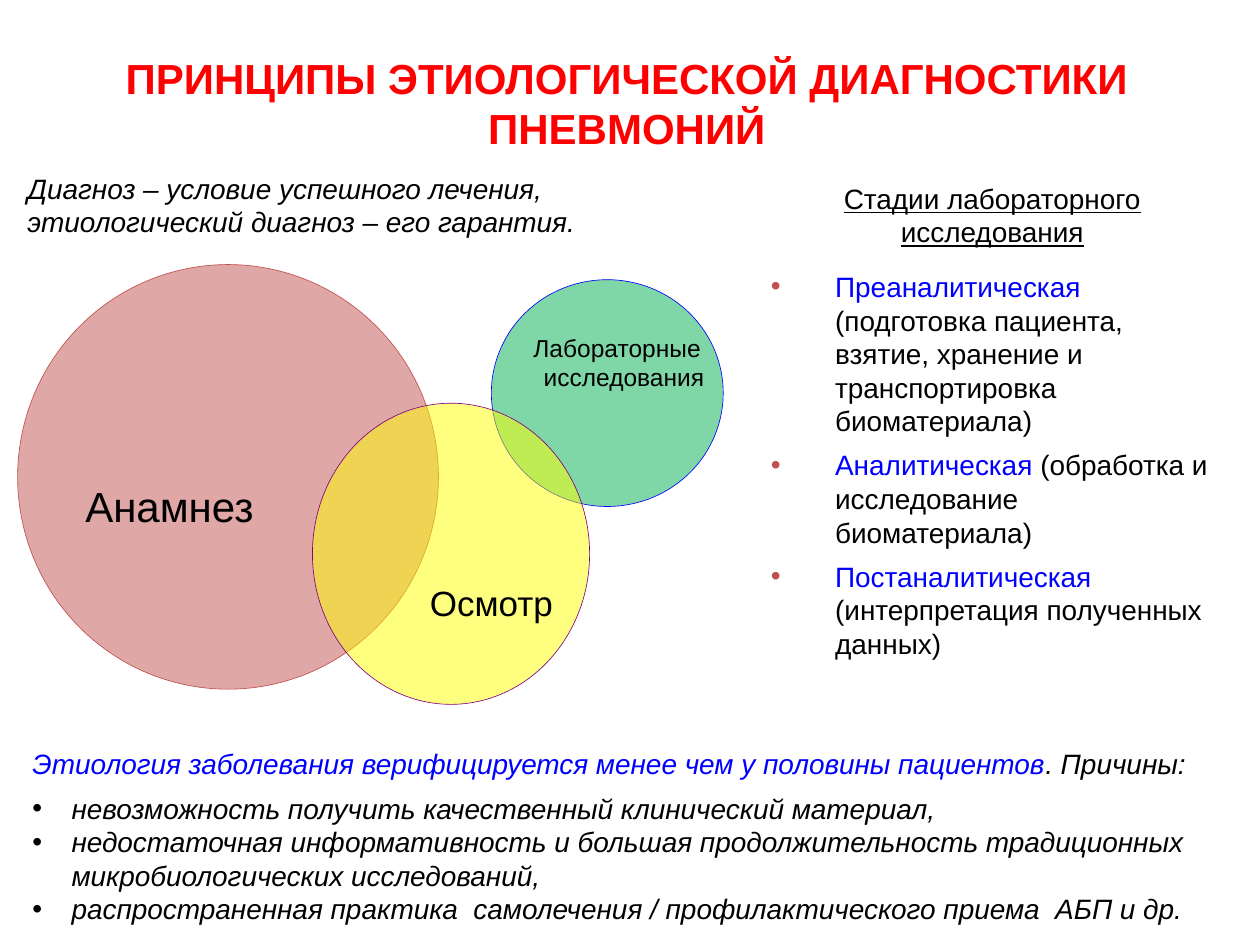
from lxml import etree
from pptx import Presentation
from pptx.dml.color import RGBColor
from pptx.enum.shapes import MSO_SHAPE
from pptx.enum.text import MSO_ANCHOR, PP_ALIGN
from pptx.oxml.ns import qn
from pptx.util import Inches, Pt

OVAL = MSO_SHAPE.OVAL
MIDDLE, TOP = MSO_ANCHOR.MIDDLE, MSO_ANCHOR.TOP
CENTER, LEFT = PP_ALIGN.CENTER, PP_ALIGN.LEFT

BLACK = RGBColor(0, 0, 0)
RED = RGBColor(0xFF, 0, 0)
BLUE = RGBColor(0, 0, 0xFF)
BRICK = RGBColor(0xC0, 0x50, 0x4D)
GREEN = RGBColor(0, 0xB0, 0x50)
YELLOW = RGBColor(0xFF, 0xFF, 0)
PURPLE = RGBColor(0x80, 0, 0x80)

COLS, ROWS = 100, 75


class Board:
    font = "Arial"

    def __init__(self, deck):
        self.wide, self.high = deck.slide_width, deck.slide_height
        self.slide = deck.slides.add_slide(deck.slide_layouts[5])

    def area(self, col, row, cols, rows):
        across, down = self.wide / COLS, self.high / ROWS
        return [int(n) for n in (col * across, row * down, cols * across, rows * down)]

    def title(self, area, text, **look):
        shape = self.slide.shapes.title
        shape.left, shape.top, shape.width, shape.height = self.area(*area)
        shape.text_frame.vertical_anchor = MIDDLE
        self.fill_para(shape.text_frame.paragraphs[0], [(text, {})], CENTER, look)

    def circle(self, area, fill, edge):
        shape = self.slide.shapes.add_shape(OVAL, *self.area(*area))
        shape.shadow.inherit = False
        shape.fill.solid()
        shape.fill.fore_color.rgb = fill
        tint = shape._element.spPr.find(qn("a:solidFill")).find(qn("a:srgbClr"))
        etree.SubElement(tint, qn("a:alpha"), val="50000")
        shape.line.color.rgb = edge
        shape.line.width = Pt(0.37)

    def text(self, area, items, wrap=True, **look):
        frame = self.slide.shapes.add_textbox(*self.area(*area)).text_frame
        frame.word_wrap = wrap
        frame.vertical_anchor = TOP if wrap else MIDDLE
        if not wrap:
            for side in ("left", "top", "right", "bottom"):
                setattr(frame, f"margin_{side}", 0)
        for num, (runs, form) in enumerate(items):
            para = frame.add_paragraph() if num else frame.paragraphs[0]
            if "indent" in form:
                self.bullet(para, form["indent"], form.get("dot"))
            if "after" in form:
                para.space_after = Pt(form["after"])
            self.fill_para(para, runs, form.get("align", LEFT), look)

    def label(self, area, lines, size):
        items = [([(line, {})], {"align": CENTER}) for line in lines]
        self.text(area, items, wrap=False, size=Pt(size))

    def bullet(self, para, indent, dot):
        props = para._p.get_or_add_pPr()
        props.set("marL", str(Inches(indent)))
        props.set("indent", str(-Inches(indent)))
        if dot:
            tint = etree.SubElement(props, qn("a:buClr"))
            etree.SubElement(tint, qn("a:srgbClr"), val=str(dot))
        etree.SubElement(props, qn("a:buFont"), typeface=self.font)
        etree.SubElement(props, qn("a:buChar"), char="•")

    def fill_para(self, para, runs, align, look):
        para.alignment = align
        for text, extra in runs:
            form = {"name": self.font, "color": BLACK, **look, **extra}
            color = form.pop("color")
            for num, line in enumerate(text.split("\n")):
                if num:
                    para.add_line_break()
                run = para.add_run()
                run.text = line
                run.font.color.rgb = color
                for key, value in form.items():
                    setattr(run.font, key, value)


def main():
    deck = Presentation()
    deck.slide_width, deck.slide_height = Inches(10), Inches(7.5)
    board = Board(deck)
    blue = {"color": BLUE}

    board.title((6, 3.6, 87.5, 9.1), "ПРИНЦИПЫ ЭТИОЛОГИЧЕСКОЙ ДИАГНОСТИКИ ПНЕВМОНИЙ",
                size=Pt(24), bold=True, color=RED)

    venn = [
        ((1.4, 21, 33.4, 33.7), BRICK, BRICK, (6.7, 38.1, 13.5, 4), ["Анамнез"], 24),
        ((39, 22.2, 18.4, 18), GREEN, BLUE, (42.3, 26.4, 13.9, 4.7),
         ["Лабораторные ", " исследования"], 14),
        ((24.8, 32, 22, 23.9), YELLOW, PURPLE, (34.1, 46.1, 9.8, 3.4), ["Осмотр"], 20),
    ]
    for area, fill, edge, spot, lines, size in venn:
        board.circle(area, fill, edge)
        board.label(spot, lines, size)

    stages = [
        ("Преаналитическая ",
         "(подготовка пациента, взятие, хранение и транспортировка биоматериала)"),
        ("Аналитическая", " (обработка и исследование биоматериала)"),
        ("Постаналитическая ", "(интерпретация полученных данных)"),
    ]
    head = ([("Стадии лабораторного исследования", {"underline": True})],
            {"align": CENTER, "after": 12})
    board.text((60.2, 13.9, 37.1, 39.4), [head] + [
        ([(name, blue), (note, {})], {"indent": 0.51, "dot": BRICK, "after": 6})
        for name, note in stages], size=Pt(16))

    motto = "Диагноз – условие успешного лечения,\nэтиологический диагноз – его гарантия."
    board.text((1.2, 13.1, 50, 6.4), [([(motto, {})], {})], size=Pt(16), italic=True)

    causes = [
        "невозможность получить качественный клинический материал,",
        "недостаточная информативность и большая продолжительность традиционных "
        "микробиологических исследований,",
        "распространенная практика  самолечения / профилактического приема  АБП и др.",
    ]
    lead = ([("Этиология заболевания верифицируется менее чем у половины пациентов", blue),
             (". Причины:", {})], {"after": 6})
    board.text((1.6, 58.8, 97.6, 15.3), [lead] + [
        ([(cause, {})], {"indent": 0.31}) for cause in causes], size=Pt(16), italic=True)

    deck.save("out.pptx")


if __name__ == "__main__":
    main()
